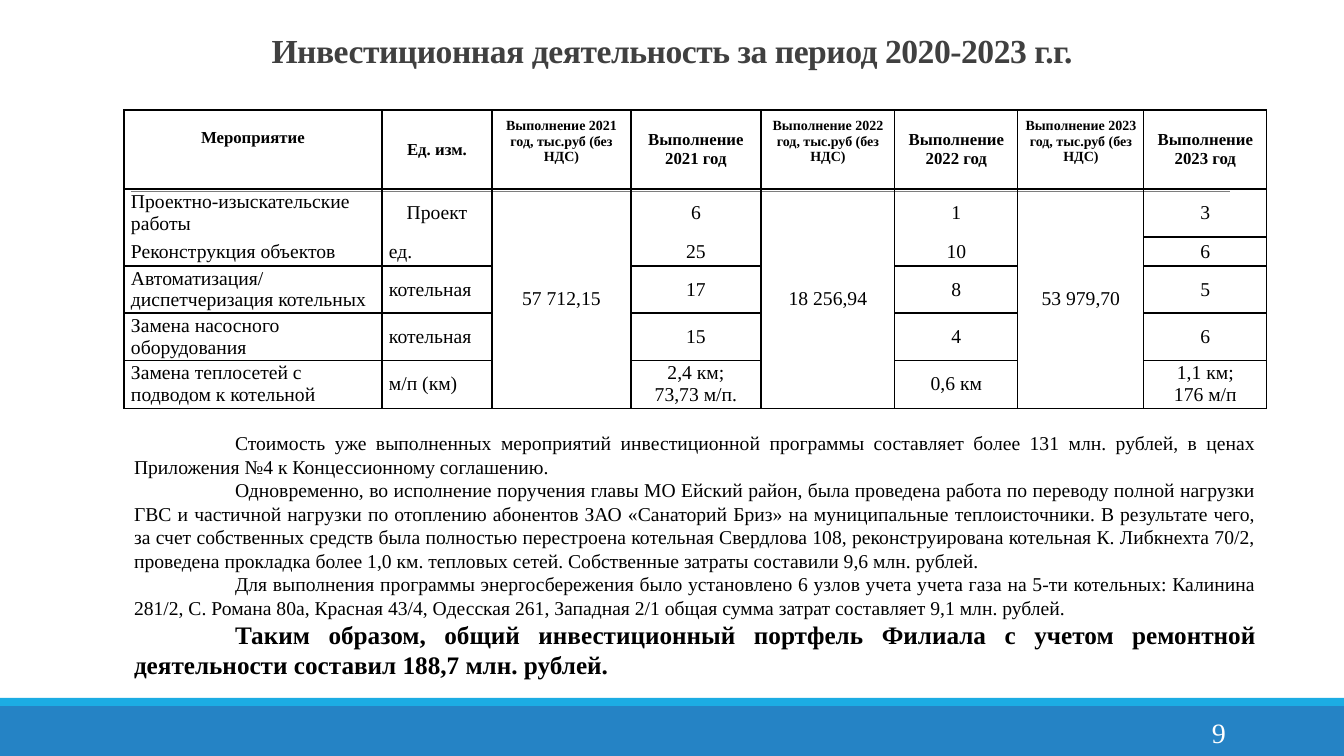
from lxml import etree
from pptx import Presentation
from pptx.dml.color import RGBColor
from pptx.enum.shapes import MSO_CONNECTOR, MSO_SHAPE
from pptx.enum.text import MSO_ANCHOR, MSO_AUTO_SIZE, PP_ALIGN
from pptx.oxml.ns import qn
from pptx.util import Pt

SCALE = 914400 / 100.8
FONT = "Times New Roman"
BLACK = RGBColor(0, 0, 0)
WHITE = RGBColor(255, 255, 255)
DARK = RGBColor(0x40, 0x40, 0x40)
GRAY = RGBColor(0x7E, 0x7E, 0x7E)
BLUE = RGBColor(0x25, 0x83, 0xC5)
CYAN = RGBColor(0x1C, 0xAC, 0xE3)

TITLE = "Инвестиционная деятельность за период 2020-2023 г.г."
COLS = [258, 110, 139, 130, 134, 123, 126, 123]
ROWS = [79, 48, 0, 0, 29, 47, 47, 48]
COST_COLS = (2, 4, 6)
OPEN_COLS = (0, 1, 3, 5)
OPEN_SIDES = {1: "B", 2: "TB", 3: "TB", 4: "T"}
SPANS = [(1, col, 7) for col in COST_COLS] + [(2, col, 4) for col in (0, 1, 3)] + [
    (1, 5, 2), (3, 5, 4), (1, 7, 3)]
COST = "Выполнение {} год, тыс.руб (без НДС)"
DONE = "Выполнение {} год"
HEADER = ["Мероприятие", "Ед. изм."] + [
    t.format(year) for year in (2021, 2022, 2023) for t in (COST, DONE)]
DATA = [
    ["Проектно-изыскательские работы", "Проект", "57 712,15", "6", "18 256,94", "1", "53 979,70", "3"],
    ["Реконструкция объектов", "ед.", "", "25", "", "", "", ""],
    ["", "", "", "", "", "10", "", ""],
    ["", "", "", "", "", "", "", "6"],
    ["Автоматизация/\nдиспетчеризация котельных", "котельная", "", "17", "", "8", "", "5"],
    ["Замена насосного оборудования", "котельная", "", "15", "", "4", "", "6"],
    ["Замена теплосетей с подводом к котельной", "м/п (км)", "", "2,4 км;\n73,73 м/п.", "", "0,6 км", "",
     "1,1 км;\n176 м/п"],
]
BODY = [
    "Стоимость уже выполненных мероприятий инвестиционной программы составляет более 131 млн. рублей, "
    "в ценах Приложения №4 к Концессионному соглашению.",
    "Одновременно, во исполнение поручения главы МО Ейский район, была проведена работа по переводу "
    "полной нагрузки ГВС и частичной нагрузки по отоплению абонентов ЗАО «Санаторий Бриз» на "
    "муниципальные теплоисточники. В результате чего, за счет собственных средств была полностью "
    "перестроена котельная Свердлова 108, реконструирована котельная К. Либкнехта 70/2, проведена "
    "прокладка более 1,0 км. тепловых сетей. Собственные затраты составили 9,6 млн. рублей.",
    "Для выполнения программы энергосбережения было установлено 6 узлов учета учета газа на 5-ти "
    "котельных: Калинина 281/2, С. Романа 80а, Красная 43/4, Одесская 261, Западная 2/1 общая сумма "
    "затрат составляет 9,1 млн. рублей.",
]
SUMMARY = ("Таким образом, общий инвестиционный портфель Филиала с учетом ремонтной деятельности "
           "составил 188,7 млн. рублей.")


def px(n):
    """Turn pixels into EMU."""
    return round(n * SCALE)


def set_all(obj, **formats):
    """Set several attributes of one object."""
    for name, value in formats.items():
        setattr(obj, name, value)


def set_margins(obj, left, top, right, bottom):
    """Set the insets of a text frame or cell in pixels."""
    set_all(obj, margin_left=px(left), margin_top=px(top), margin_right=px(right), margin_bottom=px(bottom))


def write(p, text, size, color=BLACK, bold=False, **formats):
    """Write one formatted run into a paragraph."""
    set_all(p, **formats)
    r = p.add_run()
    r.text = text
    set_all(r.font, name=FONT, size=Pt(size), bold=bold)
    r.font.color.rgb = color
    return r


def add_bar(s, y, h, color):
    """Add a full-width bar."""
    sp = s.shapes.add_shape(MSO_SHAPE.RECTANGLE, 0, px(y), px(1344), px(h))
    sp.shadow.inherit = False
    sp.fill.solid()
    sp.fill.fore_color.rgb = color
    sp.line.fill.background()


def add_rule(s, x1, x2, y):
    """Add a thin horizontal rule."""
    cxn = s.shapes.add_connector(MSO_CONNECTOR.STRAIGHT, px(x1), px(y), px(x2), px(y))
    cxn.line.color.rgb = GRAY
    cxn.line.width = Pt(0.48)
    etree.SubElement(cxn._element.spPr, qn("a:effectLst"))


def add_title(s):
    """Place and format the title placeholder."""
    sp = s.shapes.title
    set_all(sp, left=px(101), top=px(15), width=px(1142), height=px(52))
    tf = sp.text_frame
    set_all(tf, word_wrap=True, auto_size=MSO_AUTO_SIZE.NONE, vertical_anchor=MSO_ANCHOR.TOP)
    set_margins(tf, 0, 10, 0, 0)
    r = write(tf.paragraphs[0], TITLE, 24, DARK, True, alignment=PP_ALIGN.CENTER,
              line_spacing=Pt(32.6), space_before=Pt(7))
    r.font._element.set("spc", "-33")


def add_text_box(s, x, y, w, h):
    """Add a wrapping text box and return its frame."""
    tf = s.shapes.add_textbox(px(x), px(y), px(w), px(h)).text_frame
    tf.word_wrap = True
    return tf


def add_body(s):
    """Add the justified paragraphs with first-line indents."""
    tf = add_text_box(s, 124, 419, 1142, 268)
    set_margins(tf, 10, 12, 10, 5)
    for i, text in enumerate(BODY + [SUMMARY]):
        p = tf.add_paragraph() if i else tf.paragraphs[0]
        last = text == SUMMARY
        write(p, text, 18 if last else 14, bold=last, alignment=PP_ALIGN.JUSTIFY, line_spacing=1.0)
        p._p.get_or_add_pPr().set("indent", str(px(101)))


def add_page_number(s):
    """Add the page number on the lower bar."""
    tf = add_text_box(s, 1210, 717, 50, 34)
    set_margins(tf, 2, 0, 0, 0)
    write(tf.paragraphs[0], "9", 20, WHITE, line_spacing=Pt(22.9))


def set_borders(cell, hidden):
    """Draw black cell borders, leaving out the hidden sides."""
    tcPr = cell._tc.get_or_add_tcPr()
    for i, side in enumerate("LRTB"):
        ln = etree.Element(qn(f"a:ln{side}"), w=str(Pt(1)))
        if side in hidden:
            etree.SubElement(ln, qn("a:noFill"))
        else:
            fill = etree.SubElement(ln, qn("a:solidFill"))
            etree.SubElement(fill, qn("a:srgbClr"), val=str(BLACK))
        tcPr.insert(i, ln)


def fill_cell(cell, row, col, text):
    """Format one table cell and write its lines."""
    cost_head = row == 0 and col in COST_COLS
    first_head = row == 0 and col == 0
    set_margins(cell, 7, 19 if first_head else 0, 7, 16 if cost_head else 0)
    cell.vertical_anchor = MSO_ANCHOR.TOP if first_head else MSO_ANCHOR.MIDDLE
    cell.fill.background()
    set_borders(cell, OPEN_SIDES.get(row, "") if col in OPEN_COLS else "")
    centered = row == 0 or col > 1 or (row, col) == (1, 1)
    size = 10 if cost_head else 14 if row else 12
    for i, line in enumerate(text.split("\n") if text else []):
        p = cell.text_frame.add_paragraph() if i else cell.text_frame.paragraphs[0]
        write(p, line, size, bold=row == 0, alignment=PP_ALIGN.CENTER if centered else PP_ALIGN.LEFT)


def add_measures_table(s):
    """Add the table of measures and their costs."""
    tbl = s.shapes.add_table(len(ROWS), len(COLS), px(124), px(110), px(sum(COLS)), px(sum(ROWS))).table
    set_all(tbl, first_row=False, horz_banding=False)
    for column, w in zip(tbl.columns, COLS):
        column.width = px(w)
    for table_row, h in zip(tbl.rows, ROWS):
        table_row.height = px(h)
    for row, texts in enumerate([HEADER] + DATA):
        for col, text in enumerate(texts):
            fill_cell(tbl.cell(row, col), row, col, text)
    for first, col, last in SPANS:
        tbl.cell(first, col).merge(tbl.cell(last, col))


def main():
    """Build the slide and save it."""
    prs = Presentation()
    set_all(prs, slide_width=px(1344), slide_height=px(756))
    s = prs.slides.add_slide(prs.slide_layouts[5])
    add_bar(s, 706, 50, BLUE)
    add_bar(s, 698, 8, CYAN)
    add_rule(s, 131, 1230, 191)
    add_title(s)
    add_page_number(s)
    add_body(s)
    add_measures_table(s)
    prs.save("out.pptx")


if __name__ == "__main__":
    main()
